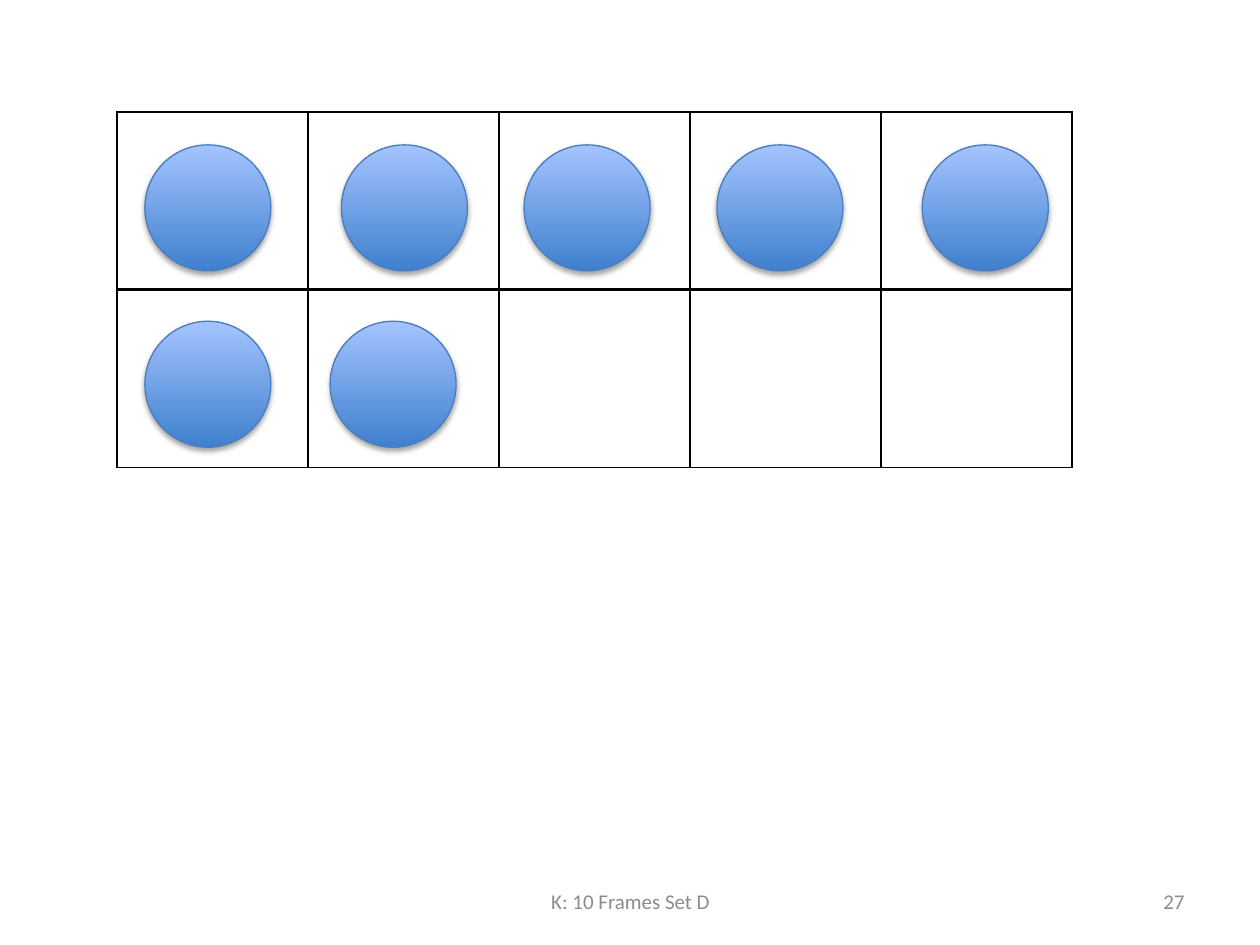
from dataclasses import dataclass

from lxml import etree
from pptx import Presentation
from pptx.dml.color import RGBColor
from pptx.enum.shapes import MSO_SHAPE
from pptx.enum.text import MSO_ANCHOR, PP_ALIGN
from pptx.oxml.ns import qn
from pptx.util import Inches, Pt

ELLIPSE = MSO_SHAPE.OVAL
MIDDLE = MSO_ANCHOR.MIDDLE
CENTER = PP_ALIGN.CENTER
RIGHT = PP_ALIGN.RIGHT


@dataclass(frozen=True)
class Theme:
    font: str = "Calibri"
    footer_size: int = 12
    footer_color: str = "8C8C8C"
    cell_fill: str = "FFFFFF"
    border: str = "000000"
    thin_border: float = 1
    thick_border: float = 2
    counter_bottom: str = "3F80CE"
    counter_top: str = "A4C4FF"
    counter_line: str = "4B7EBC"
    counter_line_width: float = 0.75
    shadow: str = "000000"


THEME = Theme()
COLUMNS = 5
COUNTER_SIZE = 1
COUNTER_ROWS = {
    0.26: (0.22, 1.78, 3.23, 4.76, 6.39),
    1.66: (0.22, 1.69),
}


def set_attributes(target, values):
    for name, value in values.items():
        setattr(target, name, value)


def add_color(parent, color):
    return etree.SubElement(parent, qn("a:srgbClr"), val=color)


def set_borders(cell, widths):
    properties = cell._tc.get_or_add_tcPr()
    for index, (tag, width) in enumerate(widths.items()):
        line = etree.Element(qn(tag), w=str(Pt(width)))
        add_color(etree.SubElement(line, qn("a:solidFill")), THEME.border)
        properties.insert(index, line)


def add_frame(slide, left, top, width, height):
    table = slide.shapes.add_table(
        2, COLUMNS, Inches(left), Inches(top), Inches(width), Inches(height)
    ).table
    set_attributes(table, {"first_row": False, "horz_banding": False})
    thin, thick = THEME.thin_border, THEME.thick_border
    for row_index, row in enumerate(table.rows):
        widths = {
            "a:lnL": thin,
            "a:lnR": thin,
            "a:lnT": thick if row_index else thin,
            "a:lnB": thin if row_index else thick,
        }
        for cell in row.cells:
            cell.fill.solid()
            cell.fill.fore_color.rgb = RGBColor.from_string(THEME.cell_fill)
            set_borders(cell, widths)


def add_shadow(shape):
    shape.shadow.inherit = False
    effects = shape._element.spPr.find(qn("a:effectLst"))
    shadow = etree.SubElement(
        effects, qn("a:outerShdw"), blurRad=str(Pt(3.1)), dist=str(Pt(1.8)),
        dir="5400000", rotWithShape="0",
    )
    etree.SubElement(add_color(shadow, THEME.shadow), qn("a:alpha"), val="35000")


def add_counter(slide, left, top, size):
    counter = slide.shapes.add_shape(
        ELLIPSE, Inches(left), Inches(top), Inches(size), Inches(size)
    )
    counter.fill.gradient()
    counter.fill.gradient_angle = 90
    colors = (THEME.counter_bottom, THEME.counter_top)
    for position, (stop, color) in enumerate(zip(counter.fill.gradient_stops, colors)):
        stop.position = position
        stop.color.rgb = RGBColor.from_string(color)
    counter.line.color.rgb = RGBColor.from_string(THEME.counter_line)
    counter.line.width = Pt(THEME.counter_line_width)
    add_shadow(counter)


def add_counters(slide, left, top):
    for row_offset, column_offsets in COUNTER_ROWS.items():
        for column_offset in column_offsets:
            add_counter(slide, left + column_offset, top + row_offset, COUNTER_SIZE)


def add_footer(slide, left, top, width, height, text, alignment):
    box = slide.shapes.add_textbox(
        Inches(left), Inches(top), Inches(width), Inches(height)
    )
    set_attributes(box.text_frame, {"word_wrap": True, "vertical_anchor": MIDDLE})
    paragraph = box.text_frame.paragraphs[0]
    set_attributes(paragraph, {"text": text, "alignment": alignment})
    font = paragraph.runs[0].font
    set_attributes(font, {"name": THEME.font, "size": Pt(THEME.footer_size)})
    font.color.rgb = RGBColor.from_string(THEME.footer_color)


def main():
    presentation = Presentation()
    set_attributes(
        presentation, {"slide_width": Inches(10), "slide_height": Inches(7.5)}
    )
    slide = presentation.slides.add_slide(presentation.slide_layouts[6])
    add_frame(slide, 0.93, 0.89, 7.58, 2.82)
    add_footer(slide, 3.42, 6.95, 3.17, 0.4, "K: 10 Frames Set D", CENTER)
    add_footer(slide, 7.17, 6.95, 2.33, 0.4, "27", RIGHT)
    add_counters(slide, 0.93, 0.89)
    presentation.save("out.pptx")


if __name__ == "__main__":
    main()
